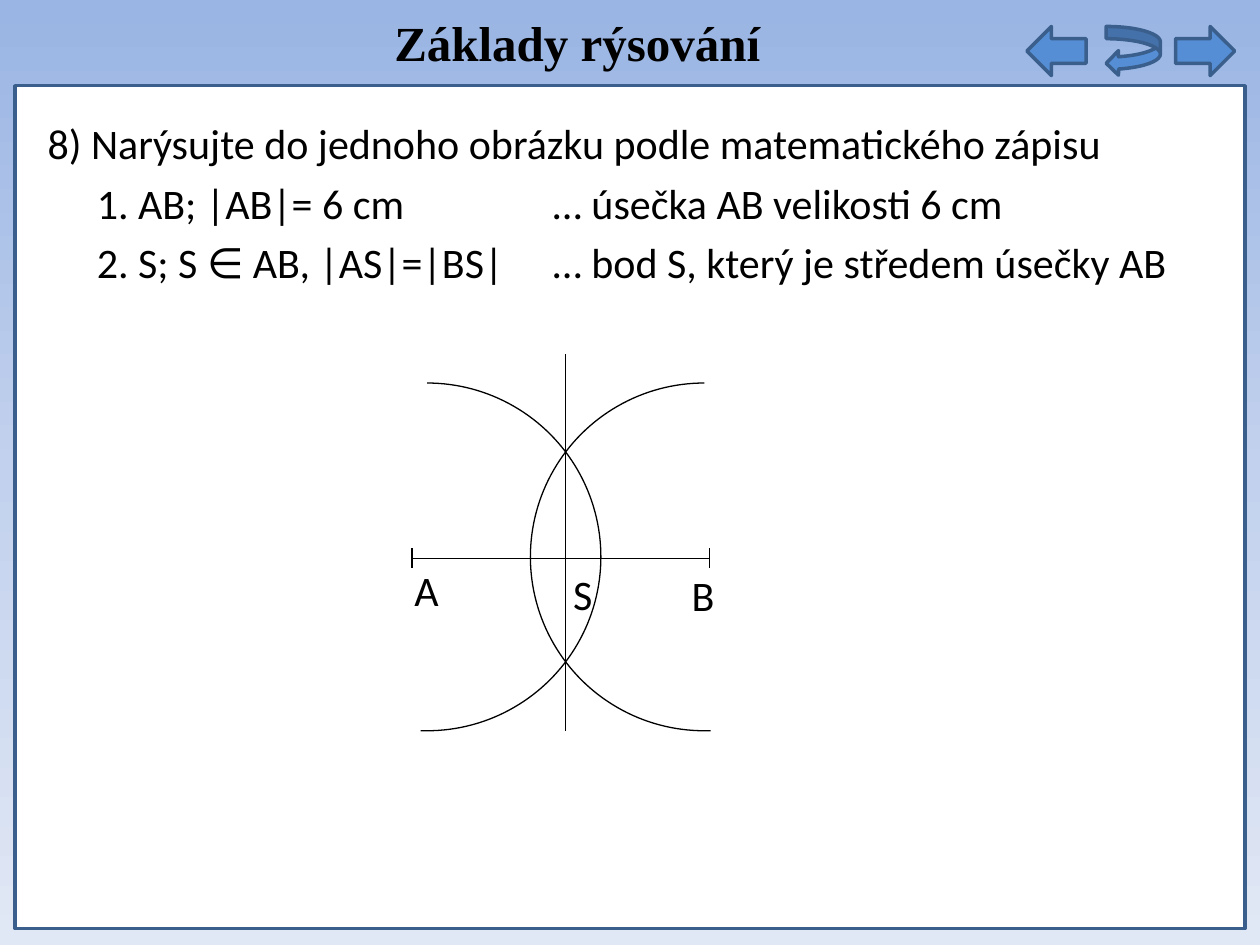
from copy import deepcopy

from pptx import Presentation
from pptx import util as u
from pptx.dml.color import RGBColor
from pptx.enum import shapes, text
from pptx.oxml.ns import qn
from lxml import etree

WIDTH, HEIGHT = 10, 7.5
BLACK = RGBColor(0, 0, 0)
WHITE = RGBColor(0xFF, 0xFF, 0xFF)
BLUE = RGBColor(0x55, 0x8E, 0xD5)
DARK_BLUE = RGBColor(0x3A, 0x5F, 0x8C)
BACKGROUND = [(0, RGBColor(0x9A, 0xB5, 0xE4)),
              (0.5, RGBColor(0xC2, 0xD1, 0xED)),
              (1, RGBColor(0xE1, 0xE8, 0xF5))]

# Grid of the task text
COLUMNS = (0.67, 4.29)
ROWS = (0.88, 1.36, 1.83)
LABEL_HEIGHT = 0.5

# Geometry of the construction
A_X, B_X, S_X, AXIS_Y = 3.27, 5.63, 4.49, 4.43
RADIUS = 1.38
ARC_ANGLES = (162, 55.27)
TICK = 0.16


def inches(*lengths):
    return [u.Inches(length) for length in lengths]


def paint_background(slide):
    fill = slide.background.fill
    fill.gradient()
    fill.gradient_angle = 270
    stop_list = slide._element.find(".//" + qn("a:gsLst"))
    stop_list.append(deepcopy(stop_list[-1]))
    for stop, (position, color) in zip(fill.gradient_stops, BACKGROUND):
        stop.position = position
        stop.color.rgb = color


def format_text(shape, content, size, font, bold=False, wrap=True):
    frame = shape.text_frame
    frame.text = content
    frame.word_wrap = wrap
    frame.auto_size = text.MSO_AUTO_SIZE.SHAPE_TO_FIT_TEXT
    paragraph = frame.paragraphs[0]
    paragraph.alignment = text.PP_ALIGN.LEFT
    run_font = paragraph.runs[0].font
    run_font.size, run_font.name, run_font.bold = u.Pt(size), font, bold
    run_font.color.rgb = BLACK


def add_title(slide, content):
    title = slide.shapes.title
    title.left, title.top, title.width, title.height = inches(3.03, 0.05, 3.14, 0.57)
    format_text(title, content, 28, "Times New Roman", bold=True, wrap=False)


def add_label(slide, content, left, top, width):
    box = slide.shapes.add_textbox(*inches(left, top, width, LABEL_HEIGHT))
    format_text(box, content, 24, "Calibri")


def add_figure(slide, kind, box, fill=None, line=DARK_BLUE, weight=2, flip=False):
    shape = slide.shapes.add_shape(kind, *inches(*box))
    shape.shadow.inherit = False
    if fill is None:
        shape.fill.background()
    else:
        shape.fill.solid()
        shape.fill.fore_color.rgb = fill
    shape.line.color.rgb = line
    shape.line.width = u.Pt(weight)
    if flip:
        shape._element.spPr.find(qn("a:xfrm")).set("flipH", "1")
    return shape


def add_line(slide, start_x, start_y, end_x, end_y):
    line = slide.shapes.add_connector(
        shapes.MSO_CONNECTOR.STRAIGHT, *inches(start_x, start_y, end_x, end_y))
    line.line.color.rgb = BLACK
    line.line.width = u.Pt(0.75)
    etree.SubElement(line._element.spPr, qn("a:effectLst"))


def add_tick(slide, x, middle):
    add_line(slide, x, middle - TICK / 2, x, middle + TICK / 2)


def add_compass_arc(slide, center_x, flip=False):
    box = (center_x - RADIUS, 3.04, 2 * RADIUS, 2 * RADIUS)
    arc = add_figure(slide, shapes.MSO_SHAPE.ARC, box,
                     line=BLACK, weight=0.75, flip=flip)
    for index, angle in enumerate(ARC_ANGLES):
        arc.adjustments[index] = angle


def add_task(slide):
    add_label(slide, "8) Narýsujte do jednoho obrázku podle matematického zápisu",
              0.28, ROWS[0], 9.37)
    steps = [
        (("1. AB; |AB|= 6 cm", 3.23), ("… úsečka AB velikosti 6 cm", 4.09)),
        (("2. S; S ∈ AB, |AS|=|BS|", 3.78),
         ("… bod S, který je středem úsečky AB", 5.43)),
    ]
    for top, step in zip(ROWS[1:], steps):
        for left, (content, width) in zip(COLUMNS, step):
            add_label(slide, content, left, top, width)


def add_navigation(slide):
    kinds = shapes.MSO_SHAPE
    buttons = [(kinds.RIGHT_ARROW, 9.33, 0.47, False),
               (kinds.RIGHT_ARROW, 8.15, 0.47, True),
               (kinds.CURVED_LEFT_ARROW, 8.78, 0.43, False)]
    for kind, left, width, flip in buttons:
        add_figure(slide, kind, (left, 0.21, width, 0.39), BLUE, flip=flip)


def add_construction(slide):
    # Segment AB with its end marks
    add_tick(slide, A_X, AXIS_Y)
    add_tick(slide, B_X, AXIS_Y)
    add_line(slide, A_X, AXIS_Y, B_X, AXIS_Y)
    # Compass arcs and the perpendicular bisector through S
    add_compass_arc(slide, 3.39)
    add_compass_arc(slide, 5.59, flip=True)
    add_line(slide, S_X, 2.81, S_X, 5.8)
    add_tick(slide, S_X, 4.46)
    # Point names
    for name, left, top in (("A", 3.19, 4.43), ("B", 5.39, 4.47), ("S", 4.45, 4.46)):
        add_label(slide, name, left, top, 0.63)


def main():
    presentation = Presentation()
    presentation.slide_width, presentation.slide_height = inches(WIDTH, HEIGHT)
    slide = presentation.slides.add_slide(presentation.slide_layouts[5])
    paint_background(slide)
    add_title(slide, "Základy rýsování")
    # White drawing sheet
    add_figure(slide, shapes.MSO_SHAPE.RECTANGLE, (0.12, 0.68, 9.76, 6.69), WHITE)
    add_task(slide)
    add_navigation(slide)
    add_construction(slide)
    presentation.save("out.pptx")


if __name__ == "__main__":
    main()
